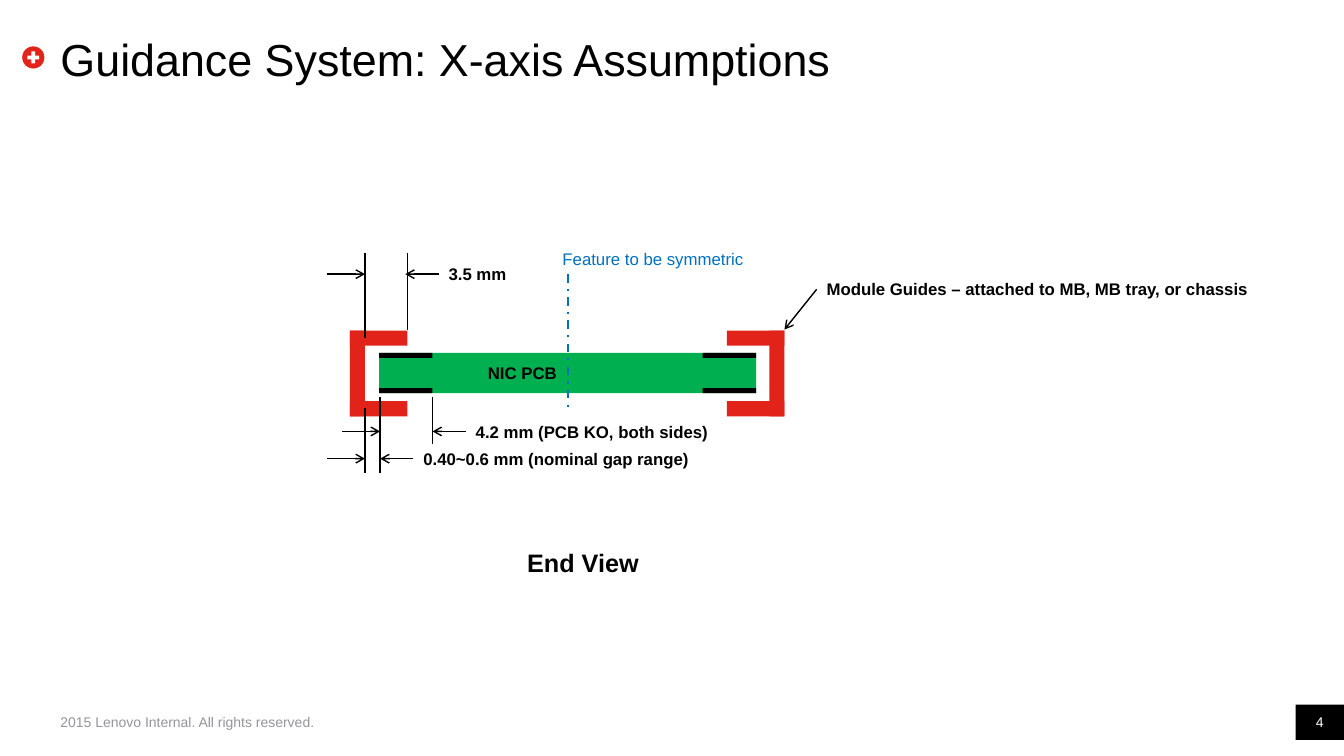
from dataclasses import dataclass

from lxml.etree import SubElement
from pptx import Presentation
from pptx.dml.color import RGBColor
from pptx.enum.dml import MSO_LINE_DASH_STYLE as Dash
from pptx.enum.shapes import MSO_CONNECTOR as Connector, MSO_SHAPE as Shape
from pptx.enum.text import MSO_ANCHOR as Anchor, MSO_AUTO_SIZE as AutoSize, PP_ALIGN as Align
from pptx.oxml.ns import qn
from pptx.util import Inches, Pt


@dataclass(frozen=True)
class Theme:
    font: str = "Arial"
    black: str = "000000"
    white: str = "FFFFFF"
    red: str = "E2231A"
    green: str = "00B050"
    blue: str = "0070C0"
    gray: str = "939598"
    title: int = 32
    caption: int = 18
    label: int = 12
    footer: int = 10


@dataclass(frozen=True)
class Box:
    left: float
    top: float
    width: float
    height: float

    @property
    def right(self):
        return self.left + self.width

    @property
    def bottom(self):
        return self.top + self.height

    @property
    def center(self):
        return self.left + self.width / 2

    @property
    def middle(self):
        return self.top + self.height / 2

    def lengths(self):
        return [Inches(value) for value in (self.left, self.top, self.width, self.height)]


THEME = Theme()
WALL = 0.15
PAD_WIDTH, PAD_HEIGHT = 0.53, 0.05
LABEL_HEIGHT = 0.3


def set_all(target, formats):
    for name, value in formats.items():
        setattr(target, name, value)


def write_text(shape, text, size, color, bold=False, align=Align.LEFT, **frame_formats):
    frame = shape.text_frame
    set_all(frame, {"vertical_anchor": Anchor.MIDDLE, **frame_formats})
    paragraph = frame.paragraphs[0]
    paragraph.alignment = align
    run = paragraph.add_run()
    run.text = text
    set_all(run.font, {"name": THEME.font, "size": Pt(size), "bold": bold})
    run.font.color.rgb = RGBColor.from_string(color)


def no_margins():
    return {f"margin_{side}": 0 for side in ("left", "top", "right", "bottom")}


def add_label(slide, box, text, size=THEME.label, color=THEME.black, bold=True):
    write_text(slide.shapes.add_textbox(*box.lengths()), text, size, color, bold,
               word_wrap=False, auto_size=AutoSize.SHAPE_TO_FIT_TEXT)


def add_block(shapes, box, color, kind=Shape.RECTANGLE):
    block = shapes.add_shape(kind, *box.lengths())
    block.shadow.inherit = False
    block.fill.solid()
    block.fill.fore_color.rgb = RGBColor.from_string(color)
    block.line.fill.background()
    return block


def add_line(slide, start, end, color=THEME.black, width=1, dash=None, arrow=False):
    points = [Inches(value) for value in (*start, *end)]
    connector = slide.shapes.add_connector(Connector.STRAIGHT, *points)
    set_all(connector.line, {"width": Pt(width), "dash_style": dash})
    connector.line.color.rgb = RGBColor.from_string(color)
    properties = connector._element.spPr
    if arrow:
        SubElement(properties.find(qn("a:ln")), qn("a:tailEnd"), type="arrow")
    SubElement(properties, qn("a:effectLst"))


def add_header(slide, box):
    marker = Box(box.left - 0.38, box.top + 0.16, 0.22, 0.22)
    add_block(slide.shapes, marker, THEME.red, Shape.OVAL)
    plus = Box(marker.left + 0.03, marker.top + 0.03, 0.16, 0.16)
    add_block(slide.shapes, plus, THEME.white, Shape.MATH_PLUS)
    title = slide.shapes.title
    set_all(title, dict(zip(("left", "top", "width", "height"), box.lengths())))
    write_text(title, "Guidance System: X-axis Assumptions", THEME.title, THEME.black,
               word_wrap=True, auto_size=AutoSize.NONE, **no_margins())


def add_footer(slide, box):
    notice = slide.shapes.add_textbox(*Box(box.left, box.top + 0.09, 2.64, 0.17).lengths())
    write_text(notice, "2015 Lenovo Internal. All rights reserved.", THEME.footer, THEME.gray,
               word_wrap=True, **no_margins())
    number = add_block(slide.shapes, Box(box.right - 0.48, box.top, 0.48, box.height), THEME.black)
    write_text(number, "4", THEME.footer, THEME.white, align=Align.CENTER, **no_margins())


def add_guide(slide, box, wall_left):
    """Draw a C-shaped guide whose wall starts at wall_left."""
    shapes = slide.shapes.add_group_shape().shapes
    add_block(shapes, Box(wall_left, box.top, WALL, box.height), THEME.red)
    for top in (box.top, box.bottom - WALL):
        add_block(shapes, Box(box.left, top, box.width, WALL), THEME.red)


def add_board(slide, box):
    shapes = slide.shapes.add_group_shape().shapes
    add_block(shapes, box, THEME.green)
    for left in (box.left, box.right - PAD_WIDTH):
        for top in (box.top, box.bottom - PAD_HEIGHT):
            add_block(shapes, Box(left, top, PAD_WIDTH, PAD_HEIGHT), THEME.black)
    add_label(slide, Box(box.left + 0.98, box.middle - LABEL_HEIGHT / 2, 0.89, LABEL_HEIGHT),
              "NIC PCB")


def add_dimension(slide, left, right, y, text, text_width):
    """Point two arrows inward at left and right, with the value after the second."""
    label_left = right + 0.33
    add_line(slide, (left - 0.38, y), (left, y), arrow=True)
    add_line(slide, (label_left, y), (right, y), arrow=True)
    add_label(slide, Box(label_left, y - LABEL_HEIGHT / 2, text_width, LABEL_HEIGHT), text)


def add_end_view(slide, box):
    """Draw the board between its two guides, with dimensions and notes."""
    left_guide = Box(box.left, box.top, 0.57, box.height)
    right_guide = Box(box.right - 0.57, box.top, 0.57, box.height)
    board = Box(box.left + 0.29, box.top + 0.22, 3.74, 0.4)
    add_guide(slide, left_guide, left_guide.left)
    add_guide(slide, right_guide, right_guide.right - WALL)
    add_board(slide, board)

    wall, edge, pad_edge = box.left + WALL, board.left + 0.01, board.left + PAD_WIDTH
    extensions = [
        (left_guide.right, -0.77, -0.01), (wall, -0.77, 0.07),
        (edge, 0.66, 1.41), (wall, 0.77, 1.41), (pad_edge, 0.66, 1.12),
    ]
    for x, start, end in extensions:
        add_line(slide, (x, box.top + start), (x, box.top + end))
    dimensions = [
        (wall, left_guide.right - 0.02, -0.56, "3.5 mm", 0.78),
        (edge, pad_edge, 1.0, "4.2 mm (PCB KO, both sides)", 2.53),
        (wall, edge, 1.27, "0.40~0.6 mm (nominal gap range)", 2.86),
    ]
    for left, right, offset, text, width in dimensions:
        add_dimension(slide, left, right, box.top + offset, text, width)

    note = Box(box.right + 0.32, box.top - 0.56, 4.43, LABEL_HEIGHT)
    add_label(slide, note, "Module Guides – attached to MB, MB tray, or chassis")
    add_line(slide, (note.left, note.middle), (box.right, box.top - 0.01), arrow=True)

    symmetry = Box(board.center - 0.15, box.top - 0.86, 2.01, LABEL_HEIGHT)
    add_label(slide, symmetry, "Feature to be symmetric", color=THEME.blue, bold=False)
    add_line(slide, (board.center, symmetry.bottom), (board.center, box.top + 0.77),
             THEME.blue, 1.5, Dash.DASH_DOT)
    add_label(slide, Box(board.center - 0.5, box.bottom + 1.25, 1.32, 0.4),
              "End View", THEME.caption)


def main():
    presentation = Presentation()
    set_all(presentation, {"slide_width": Inches(13.33), "slide_height": Inches(7.5)})
    slide = presentation.slides.add_slide(presentation.slide_layouts[5])
    add_header(slide, Box(0.6, 0.3, 12.11, 0.57))
    add_footer(slide, Box(0.6, 6.99, 12.73, 0.35))
    add_end_view(slide, Box(3.47, 3.28, 4.31, 0.85))
    presentation.save("out.pptx")


if __name__ == "__main__":
    main()
